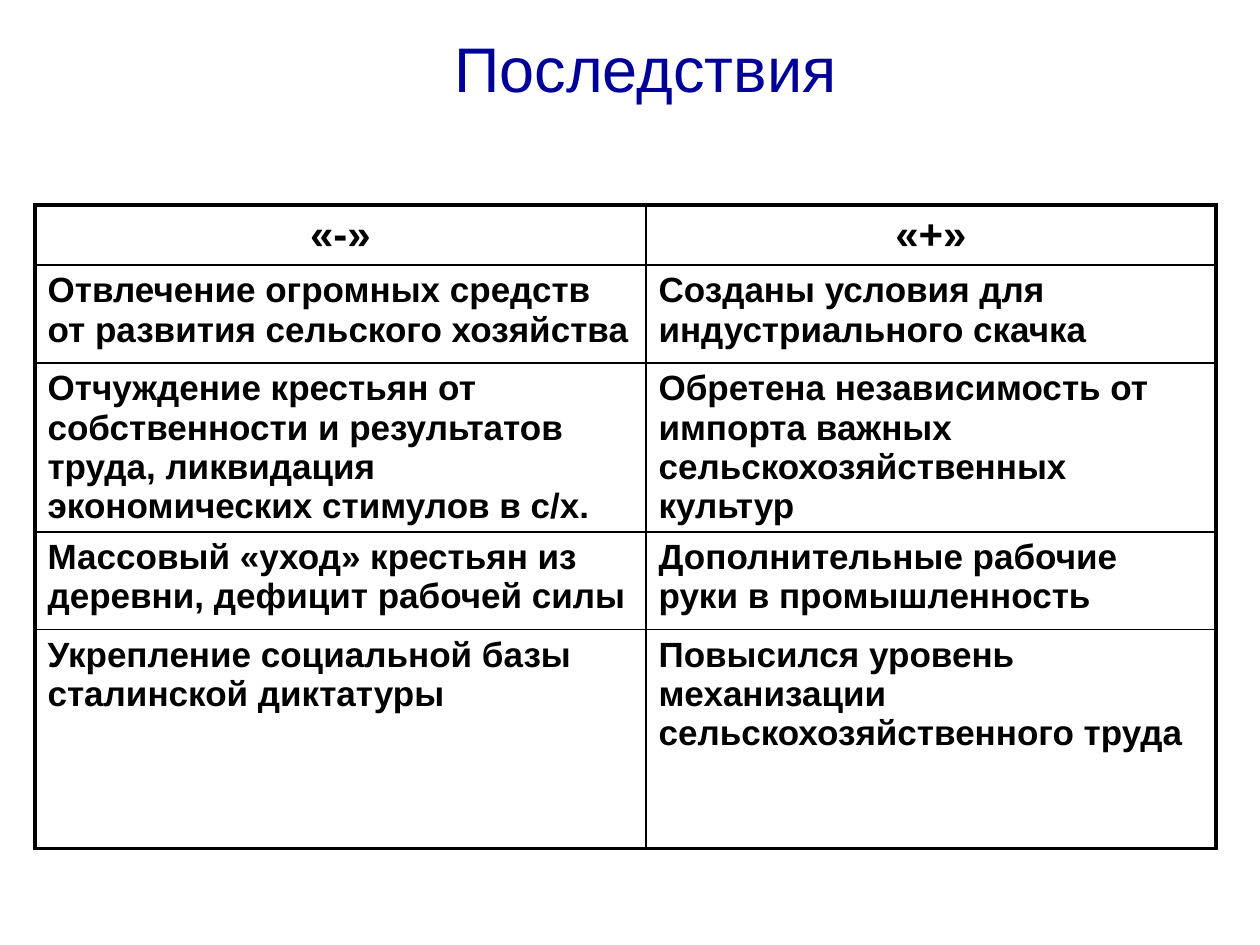
from lxml import etree
from pptx import Presentation
from pptx import util as u
from pptx.dml.color import RGBColor
from pptx.enum import text
from pptx.oxml.ns import qn

PX_PER_INCH = 126


def px(n):
    return u.Emu(round(n * 914400 / PX_PER_INCH))


def color(hex_string):
    return RGBColor.from_string(hex_string)


class Deck:
    font = "Arial"
    ink = "000000"
    accent = "000099"
    paper = "FFFFFF"
    outer, inner = 2.25, 1

    def __init__(self, width, height):
        self.prs = Presentation()
        self.prs.slide_width, self.prs.slide_height = px(width), px(height)
        self.slide = self.prs.slides.add_slide(self.prs.slide_layouts[5])

    def run(self, paragraph, words, size, hex_string, bold=False):
        run = paragraph.add_run()
        run.text = words
        run.font.name, run.font.size, run.font.bold = self.font, u.Pt(size), bold
        run.font.color.rgb = color(hex_string)

    def title(self, words, left, top, width, height):
        heading = self.slide.shapes.title
        heading.left, heading.top = px(left), px(top)
        heading.width, heading.height = px(width), px(height)
        frame = heading.text_frame
        frame.word_wrap = False
        frame.auto_size = text.MSO_AUTO_SIZE.NONE
        frame.vertical_anchor = text.MSO_ANCHOR.MIDDLE
        frame.paragraphs[0].alignment = text.PP_ALIGN.CENTER
        self.run(frame.paragraphs[0], words, 36, self.accent)

    def borders(self, cell, widths):
        props = cell._tc.get_or_add_tcPr()
        for index, (side, points) in enumerate(widths.items()):
            line = etree.Element(qn(f"a:ln{side}"), w=str(u.Pt(points)))
            fill = etree.SubElement(line, qn("a:solidFill"))
            etree.SubElement(fill, qn("a:srgbClr"), val=self.ink)
            props.insert(index, line)

    def table(self, rows, left, top, col_widths, row_heights):
        grid = self.slide.shapes.add_table(
            len(rows), len(col_widths), px(left), px(top),
            px(sum(col_widths)), px(sum(row_heights))).table
        grid.first_row = grid.horz_banding = False
        for column, width in zip(grid.columns, col_widths):
            column.width = px(width)
        for row, height in zip(grid.rows, row_heights):
            row.height = px(height)
        last_row, last_col = len(rows) - 1, len(col_widths) - 1
        for r, row in enumerate(rows):
            for c, words in enumerate(row):
                cell = grid.cell(r, c)
                cell.fill.solid()
                cell.fill.fore_color.rgb = color(self.paper)
                # Heavy frame outside, thin rules inside
                on_edge = {"L": c == 0, "R": c == last_col,
                           "T": r == 0, "B": r == last_row}
                self.borders(cell, {side: self.outer if edge else self.inner
                                    for side, edge in on_edge.items()})
                paragraph = cell.text_frame.paragraphs[0]
                if r == 0:
                    paragraph.alignment = text.PP_ALIGN.CENTER
                self.run(paragraph, words, 24 if r == 0 else 20, self.ink, True)


def main():
    deck = Deck(1260, 945)

    # Heading
    deck.title("Последствия", 333, 26, 625, 82)

    # Drawbacks and benefits
    consequences = [
        ("«-»", "«+»"),
        ("Отвлечение огромных средств от развития сельского хозяйства",
         "Созданы условия для индустриального скачка"),
        ("Отчуждение крестьян от собственности и результатов труда, "
         "ликвидация экономических стимулов в с/х.",
         "Обретена независимость от импорта важных "
         "сельскохозяйственных культур"),
        ("Массовый «уход» крестьян из деревни, дефицит рабочей силы",
         "Дополнительные рабочие руки в промышленность"),
        ("Укрепление социальной базы сталинской диктатуры",
         "Повысился уровень механизации сельскохозяйственного труда"),
    ]
    deck.table(consequences, 35, 205, [611, 570], [60, 98, 159, 98, 219])

    deck.prs.save("out.pptx")


if __name__ == "__main__":
    main()
